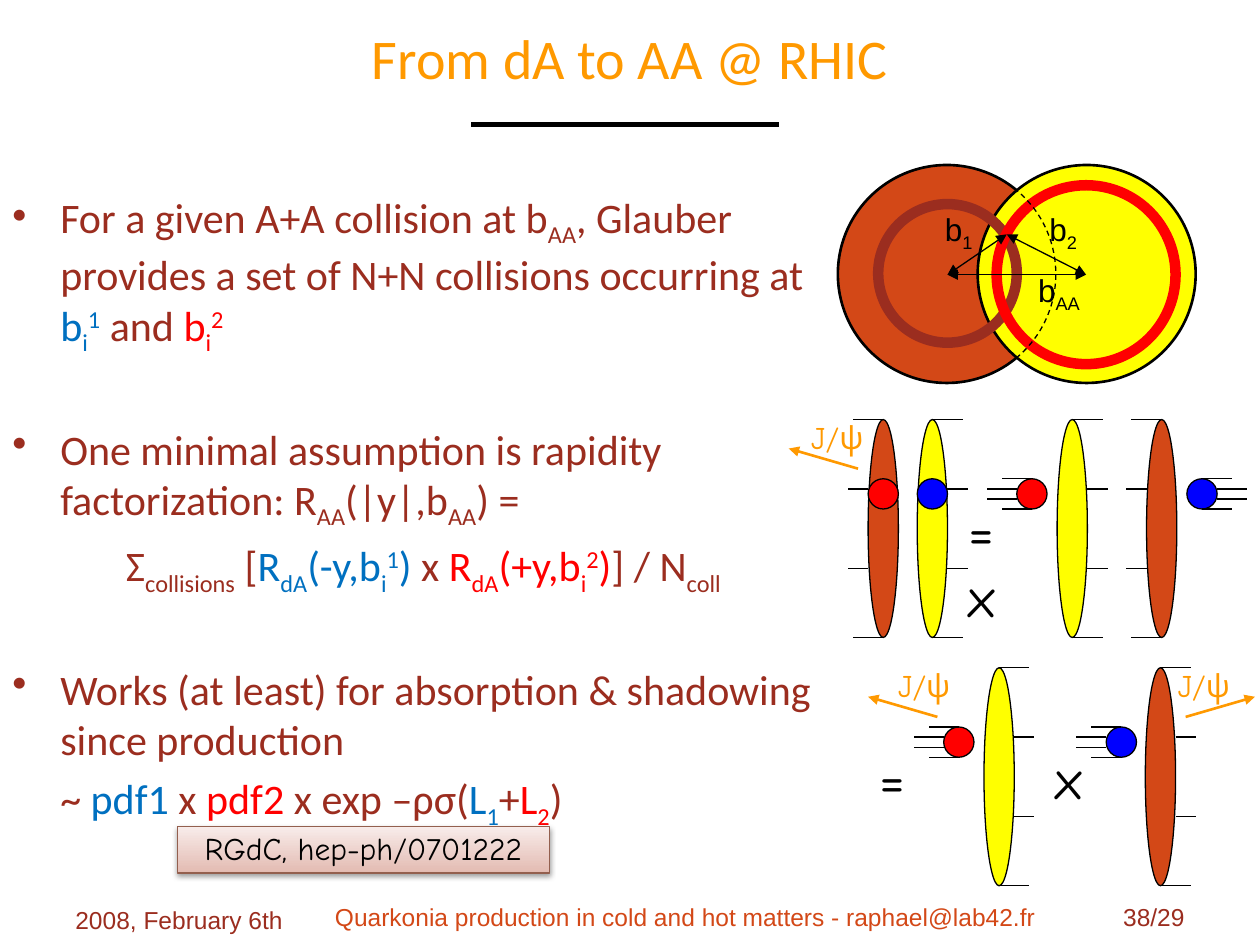
"""Builds the slide on going from dA to AA collisions."""
from lxml import etree
from pptx import Presentation, util as u
from pptx.dml.color import RGBColor
from pptx.enum import dml, shapes, text
from pptx.oxml import ns

HUES = dict(black="000000", gold="FF9900", rust="D34817", brown="9B2D1F",
            yellow="FFFF00", red="FF0000", blue="0000FF", sky="0070C0",
            edge="935F4E", dark="E3BBB2", pale="F8ECEA")
LEFT, MID, RIGHT = text.PP_ALIGN.LEFT, text.PP_ALIGN.CENTER, text.PP_ALIGN.RIGHT

TITLE = "From dA to AA @ RHIC"
BODY = [
    ("bullet", 5, [("brown", "For a given A+A collision at b", "_AA",
                    ", Glauber provides a set of N+N collisions occurring at "),
                   ("sky", "b", "_i", "^1"), ("brown", " and "), ("red", "b", "_i", "^2")]),
    ("bullet", 38, [("brown", "One minimal assumption is rapidity factorization: R",
                     "_AA", "(|y|,b", "_AA", ") =")]),
    ("center", 5, [("brown", "Σ", "_collisions", " ["),
                   ("sky", "R", "_dA", "(-y,b", "_i", "^1", ") "), ("brown", "x "),
                   ("red", "R", "_dA", "(+y,b", "_i", "^2", ")"),
                   ("brown", "] / N", "_coll")]),
    ("bullet", 38, [("brown", "Works (at least) for absorption & shadowing since production")]),
    ("plain", 5, [("brown", "~ "), ("sky", "pdf1"), ("brown", " x "), ("red", "pdf2"),
                  ("brown", " x exp –ρσ("), ("sky", "L", "_1"), ("brown", "+"),
                  ("red", "L", "_2"), ("brown", ")")]),
]
FOOT = [("2008, February 6th", (0.5, 7.13, 2.33, 0.29), "brown", LEFT),
        ("Quarkonia production in cold and hot matters - raphael@lab42.fr",
         (2.5, 7.11, 5.88, 0.44), "rust", MID),
        ("38/29", (7.17, 7.11, 2.33, 0.29), "brown", RIGHT)]

DISKS = [(6.65, 1.31, 1.73, "rust", "black", 1.5), (7.76, 1.31, 1.73, "yellow", "black", 1.5),
         (6.97, 1.62, 1.1, None, "brown", 6), (7.91, 1.47, 1.42, None, "red", 6)]
CORES, MEET = [(7.52, 2.18), (8.62, 2.18)], (7.99, 1.86)
MARKS = [("_1", 7.4, 1.62), ("_2", 8.23, 1.62), ("_AA", 8.14, 2.1)]

ROWS, TALL, SIZE = (3.33, 5.3), 1.73, 0.24
NUCLEI = [(7.28, 0, "yellow", 1), (6.89, 0, "rust", -1), (8.39, 0, "yellow", 1),
          (9.1, 0, "rust", -1), (7.81, 1, "yellow", 1), (9.09, 1, "rust", 1)]
BALLS = [(6.89, 0, "red", 0), (7.28, 0, "blue", 0), (8.07, 0, "red", -1),
         (9.42, 0, "blue", 1), (7.49, 1, "red", -1), (8.78, 1, "blue", -1)]
SIGNS = [("=", 7.79, 3.88), ("x", 7.79, 4.41), ("=", 7.08, 5.85), ("x", 8.48, 5.85)]
DECAYS = [(6.81, 0, -1, 6.34), (7.44, 1, -1, 7.03), (9.41, 1, 1, 9.25)]

deck = Presentation()
deck.slide_width, deck.slide_height = u.Inches(10), u.Inches(7.5)
slide = deck.slides.add_slide(deck.slide_layouts[5])


def rgb(hue):
    return RGBColor.from_string(HUES[hue])


def inch(*nums):
    return [u.Inches(n) for n in nums]


def sub(node, tag, **vals):
    return etree.SubElement(node, ns.qn(tag), {k: str(v) for k, v in vals.items()})


def write(par, parts, face, size, hue):
    for part in parts:
        base = {"_": -25000, "^": 30000}.get(part[0])
        run = par.add_run()
        run.text = part[1:] if base else part
        for key, val in dict(name=face, size=u.Pt(size)).items():
            setattr(run.font, key, val)
        run.font.color.rgb = rgb(hue)
        if base:
            run._r.get_or_add_rPr().set("baseline", str(base))


def label(box, parts, face, size, hue, side=LEFT, wrap=False):
    frame = slide.shapes.add_textbox(*inch(*box)).text_frame
    frame.word_wrap = wrap
    frame.paragraphs[0].alignment = side
    write(frame.paragraphs[0], parts, face, size, hue)


def line(start, end, hue="black", width=0.75, ends=()):
    bar = slide.shapes.add_connector(shapes.MSO_CONNECTOR.STRAIGHT, *inch(*start, *end))
    bar.line.color.rgb, bar.line.width = rgb(hue), u.Pt(width)
    for end in ends:
        sub(bar.line._get_or_add_ln(), f"a:{end}", type="triangle")
    sub(bar._element.spPr, "a:effectLst")


def oval(x, y, wide, tall, fill, edge="black", width=0.75):
    disk = slide.shapes.add_shape(shapes.MSO_SHAPE.OVAL, *inch(x, y, wide, tall))
    disk.shadow.inherit = False
    if fill:
        disk.fill.solid()
        disk.fill.fore_color.rgb = rgb(fill)
    else:
        disk.fill.background()
    disk.line.color.rgb, disk.line.width = rgb(edge), u.Pt(width)
    return disk


def draw_head():
    head = slide.shapes.title
    for key, val in zip(("left", "top", "width", "height"), inch(0.5, 0, 9, 0.91)):
        setattr(head, key, val)
    head.text_frame.vertical_anchor = text.MSO_ANCHOR.MIDDLE
    par = head.text_frame.paragraphs[0]
    par.alignment = MID
    write(par, [TITLE], "Calibri", 32, "gold")
    line((3.74, 0.99), (6.18, 0.99), width=3)


def draw_rings():
    both = ("headEnd", "tailEnd")
    for x, y, size, fill, edge, width in DISKS:
        oval(x, y, size, size, fill, edge, width)
    for start, end in ((CORES[1], MEET), (MEET, CORES[0]), CORES):
        line(start, end, ends=both)
    for low, x, y in MARKS:
        label((x, y, 0.7, 0.4), ["b", low], "Arial", 18, "black")
    x, y, size = DISKS[0][:3]
    oval(x, y, size, size, None).line.dash_style = dml.MSO_LINE.DASH


def draw_beams():
    for x, row, hue, way in NUCLEI:
        top, core = ROWS[row], x + SIZE / 2
        oval(x, top, SIZE, TALL, hue)
        for drop, gap, size in ((0, 0, 0.24), (0.55, 0.12, 0.16),
                                (1.18, 0.12, 0.16), (TALL, 0, 0.24)):
            near = core + way * gap
            line((near, top + drop), (near + way * size, top + drop))
    for x, row, hue, way in BALLS:
        top, core = ROWS[row] + 0.47, x + SIZE / 2
        oval(x, top, SIZE, SIZE, hue)
        for step in range(4 if way else 0):
            near = core + way * (0.12 if step in (1, 2) else 0)
            y = top + step * SIZE / 3
            line((near, y), (near + way * 0.24, y))
    for sign, core, y in SIGNS:
        label((core - 0.25, y, 0.5, 0.63), [sign], "Comic Neue", 32, "black", MID)
    for x, row, way, left in DECAYS:
        y = ROWS[row] + 0.39
        line((x, y), (x + way * 0.55, y - 0.16), "gold", 1.5, ["tailEnd"])
        label((left, ROWS[row] - 0.06, 0.64, 0.4), ["J/ψ"], "Comic Neue", 18, "gold")


def draw_cite():
    box = slide.shapes.add_shape(shapes.MSO_SHAPE.RECTANGLE, *inch(1.41, 6.56, 2.95, 0.37))
    box.fill.gradient()
    box.fill.gradient_angle = 90
    for stop, hue in zip(box.fill.gradient_stops, ("dark", "pale")):
        stop.color.rgb = rgb(hue)
    box.line.color.rgb, box.line.width = rgb("edge"), u.Pt(0.75)
    box.shadow.inherit = False
    glow = sub(box._element.spPr.find(ns.qn("a:effectLst")), "a:outerShdw", blurRad=u.Pt(3.1),
               dist=u.Pt(1.6), dir=5400000, rotWithShape=0)
    sub(sub(glow, "a:srgbClr", val=HUES["black"]), "a:alpha", val=38000)
    par = box.text_frame.paragraphs[0]
    par.alignment, par.line_spacing = MID, 0.9
    write(par, ["RGdC, hep-ph/0701222"], "Comic Neue", 18, "black")


def draw_body():
    frame = slide.shapes.add_textbox(*inch(0, 1.47, 6.72, 5.02)).text_frame
    frame.word_wrap = True
    for spot, (kind, gap, runs) in enumerate(BODY):
        par = frame.add_paragraph() if spot else frame.paragraphs[0]
        par.alignment = MID if kind == "center" else LEFT
        par.space_before = u.Pt(gap)
        prop = par._p.get_or_add_pPr()
        prop.set("marL", str(u.Inches(0.38)))
        prop.set("indent", str(0 if kind == "plain" else -u.Inches(0.38)))
        if kind == "bullet":
            sub(prop, "a:buChar", char="•")
        for hue, *parts in runs:
            write(par, parts, "Calibri", 24, hue)


draw_head()
draw_rings()
draw_beams()
draw_cite()
draw_body()
for words, box, hue, side in FOOT:
    label(box, [words], "Arial", 14, hue, side, True)
deck.save("out.pptx")
